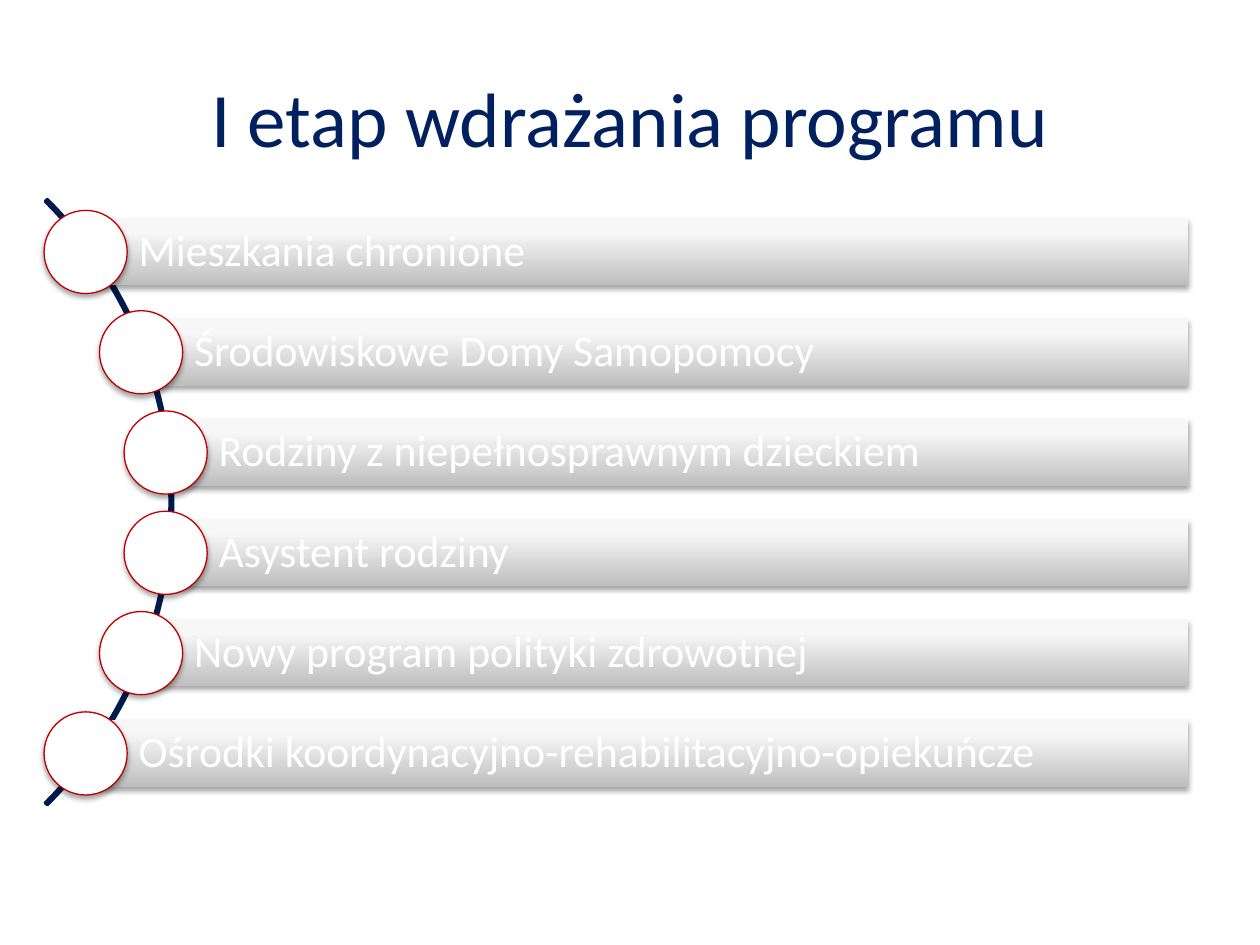
from copy import deepcopy

from lxml.etree import SubElement
from pptx import Presentation
from pptx.dml.color import RGBColor
from pptx.enum.shapes import MSO_SHAPE
from pptx.enum.text import MSO_ANCHOR, PP_ALIGN
from pptx.oxml.ns import qn
from pptx.util import Inches, Pt

# Grid of 100 columns by 75 rows, each 0.1 inch
COLS, ROWS = 100, 75
CELL = Inches(0.1)

TOPICS = [
    "Mieszkania chronione",
    "Środowiskowe Domy Samopomocy",
    "Rodziny z niepełnosprawnym dzieckiem",
    "Asystent rodziny",
    "Nowy program polityki zdrowotnej",
    "Ośrodki koordynacyjno-rehabilitacyjno-opiekuńcze",
]
LEFTS = [6.8, 11.2, 13.15]
LEFTS += LEFTS[::-1]
FIRST_ROW, PITCH = 20, 7.96
BAR_RIGHT, BAR_HEIGHT, DOT = 94.3, 5.3, 6.6


def grid(*cells):
    return [round(c * CELL) for c in cells]


def rgb(hex_color):
    return RGBColor.from_string(hex_color)


class Deck:
    font = "Calibri"
    navy, arc_navy, red, white = "002060", "001A4D", "C00000", "FFFFFF"
    bar_stops = [(0, "BEBEBE"), (0.8, "F7F7F7"), (1, "F8F8F8")]

    def __init__(self):
        self.prs = Presentation()
        self.prs.slide_width, self.prs.slide_height = grid(COLS, ROWS)
        self.s = self.prs.slides.add_slide(self.prs.slide_layouts[5])

    def set_text(self, tf, text, size, color, align):
        tf.word_wrap = True
        tf.vertical_anchor = MSO_ANCHOR.MIDDLE
        p = tf.paragraphs[0]
        p.text = text
        p.alignment = align
        p.font.name, p.font.size = self.font, Pt(size)
        p.font.color.rgb = rgb(color)
        return p

    def title(self, text, *box):
        sp = self.s.shapes.title
        sp.left, sp.top, sp.width, sp.height = grid(*box)
        self.set_text(sp.text_frame, text, 44, self.navy, PP_ALIGN.CENTER)

    def shape(self, kind, *box):
        sp = self.s.shapes.add_shape(kind, *grid(*box))
        sp.shadow.inherit = False
        return sp

    def outline(self, sp, color, width):
        sp.line.color.rgb = rgb(color)
        sp.line.width = Pt(width)

    def drop_shadow(self, sp):
        effects = sp._element.spPr.find(qn("a:effectLst"))
        shadow = SubElement(effects, qn("a:outerShdw"), blurRad=str(Pt(3.1)),
                            dist=str(Pt(1.8)), dir="5400000", rotWithShape="0")
        color = SubElement(shadow, qn("a:srgbClr"), val="000000")
        SubElement(color, qn("a:alpha"), val="35000")

    def arc(self, *box):
        sp = self.shape(MSO_SHAPE.BLOCK_ARC, *box)
        for i, value in enumerate((189, 27, 0.003)):
            sp.adjustments[i] = value
        sp.fill.background()
        self.outline(sp, self.arc_navy, 2)

    def bar(self, text, *box):
        sp = self.shape(MSO_SHAPE.RECTANGLE, *box)
        sp.line.fill.background()
        sp.fill.gradient()
        sp.fill.gradient_angle = 90
        stops = sp._element.spPr.find(".//" + qn("a:gsLst"))
        stops.append(deepcopy(stops[0]))
        for stop, (position, color) in zip(sp.fill.gradient_stops, self.bar_stops):
            stop.position = position
            stop.color.rgb = rgb(color)
        self.drop_shadow(sp)
        tf = sp.text_frame
        tf.margin_left, tf.margin_right, tf.margin_top, tf.margin_bottom = grid(4.2, 0.7, 0.7, 0.7)
        p = self.set_text(tf, text, 25, self.white, PP_ALIGN.LEFT)
        p.line_spacing = 0.9

    def dot(self, x, y, size):
        """Draw a circle centred on x, y."""
        sp = self.shape(MSO_SHAPE.OVAL, x - size / 2, y - size / 2, size, size)
        sp.fill.solid()
        sp.fill.fore_color.rgb = rgb(self.white)
        self.outline(sp, self.red, 0.75)
        self.drop_shadow(sp)


def main():
    deck = Deck()
    deck.title("I etap wdrażania programu", 5, 3, 90, 12.5)
    deck.arc(-54.2, 5.9, 67.9, 67.9)
    for i, (text, left) in enumerate(zip(TOPICS, LEFTS)):
        middle = FIRST_ROW + i * PITCH
        deck.bar(text, left, middle - BAR_HEIGHT / 2, BAR_RIGHT - left, BAR_HEIGHT)
        deck.dot(left, middle, DOT)
    deck.prs.save("out.pptx")


if __name__ == "__main__":
    main()
